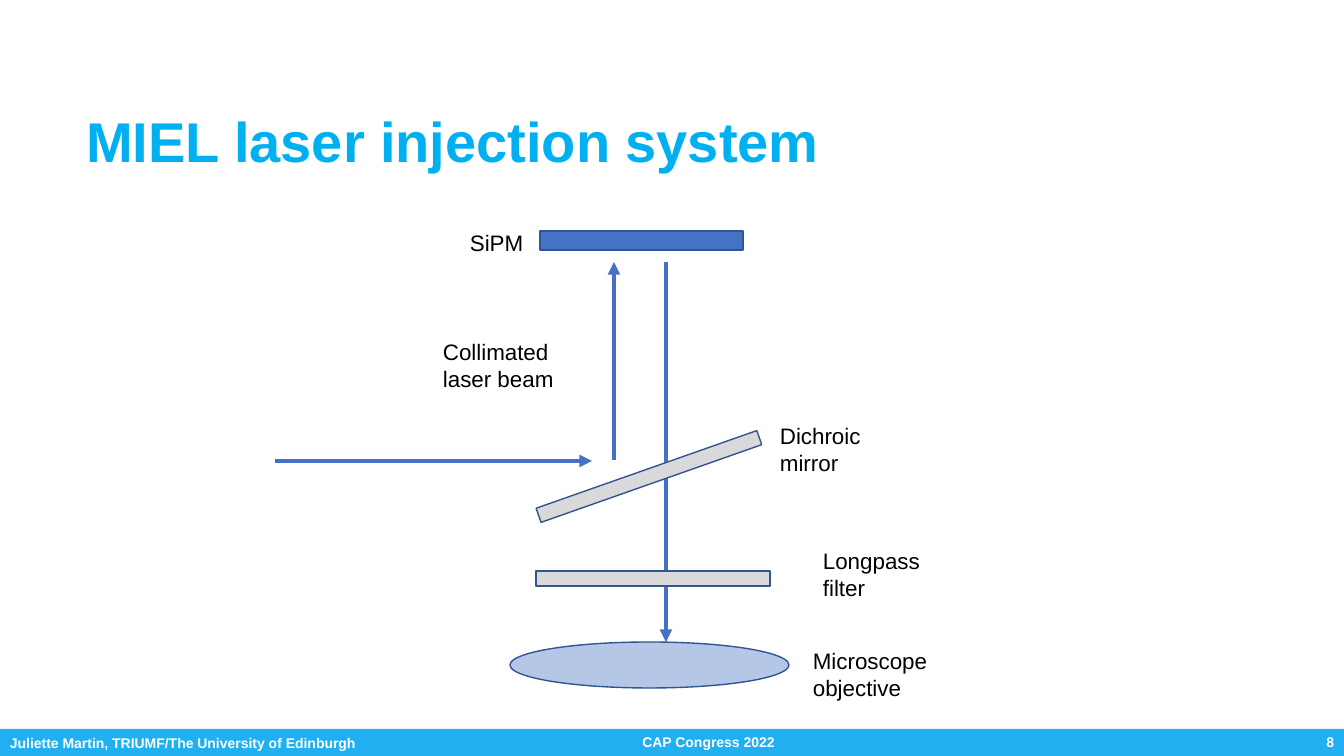
from dataclasses import dataclass

from lxml.etree import SubElement
from pptx import Presentation
from pptx.dml.color import RGBColor
from pptx.enum.shapes import MSO_CONNECTOR, MSO_SHAPE
from pptx.enum.text import MSO_ANCHOR, MSO_AUTO_SIZE, PP_ALIGN
from pptx.oxml.ns import qn
from pptx.slide import Slide
from pptx.text.text import TextFrame
from pptx.util import Emu, Pt

EMU_PER_PX = 914400 / 100.8
SLIDE_WIDTH, SLIDE_HEIGHT = 1344, 756


@dataclass(frozen=True)
class Theme:
    font: str = "Arial"
    title: str = "00B0F0"
    text: str = "000000"
    footer: str = "20B0F1"
    footer_text: str = "FFFFFF"
    beam: str = "4472C4"
    outline: str = "325491"
    glass: str = "D9D9D9"
    lens: str = "B4C7E7"
    title_size: int = 40
    label_size: int = 16
    footer_size: int = 10
    beam_width: int = 3
    outline_width: int = 1


THEME = Theme()


@dataclass(frozen=True)
class Box:
    left: int
    top: int
    width: int
    height: int

    def emu(self) -> tuple[Emu, Emu, Emu, Emu]:
        return px(self.left), px(self.top), px(self.width), px(self.height)


@dataclass(frozen=True)
class Part:
    box: Box
    fill: str
    preset: MSO_SHAPE = MSO_SHAPE.RECTANGLE
    outline: str | None = THEME.outline
    rotation: float = 0


@dataclass(frozen=True)
class Beam:
    start: tuple[int, int]
    end: tuple[int, int]


@dataclass(frozen=True)
class Label:
    text: str
    box: Box
    size: int = THEME.label_size
    color: str = THEME.text
    bold: bool = False
    align: PP_ALIGN = PP_ALIGN.LEFT


def px(length: int) -> Emu:
    return Emu(round(length * EMU_PER_PX))


def footer_label(text: str, box: Box, align: PP_ALIGN) -> Label:
    return Label(text, box, THEME.footer_size, THEME.footer_text, True, align)


FOOTER_TOP, FOOTER_HEIGHT = 729, 27
BEAMS = [
    Beam((614, 460), (614, 262)),  # reflected up to the SiPM
    Beam((666, 262), (666, 642)),  # from the SiPM to the objective
    Beam((275, 461), (592, 461)),  # incoming laser
]
PARTS = [
    Part(Box(540, 231, 203, 19), THEME.beam),  # SiPM
    Part(Box(532, 469, 234, 15), THEME.glass, rotation=340.6),  # dichroic mirror
    Part(Box(536, 571, 234, 15), THEME.glass),  # longpass filter
    Part(Box(510, 642, 279, 46), THEME.lens, MSO_SHAPE.OVAL),  # objective
    Part(Box(0, FOOTER_TOP, SLIDE_WIDTH, FOOTER_HEIGHT), THEME.footer, outline=None),
]
LABELS = [
    Label("SiPM", Box(460, 224, 153, 33)),
    Label("Collimated laser beam", Box(433, 333, 153, 64)),
    Label("Dichroic mirror", Box(770, 417, 153, 64)),
    Label("Longpass filter", Box(813, 542, 153, 64)),
    Label("Microscope objective", Box(803, 642, 175, 64)),
    footer_label("Juliette Martin, TRIUMF/The University of Edinburgh",
                 Box(0, FOOTER_TOP + 1, 379, FOOTER_HEIGHT), PP_ALIGN.LEFT),
    footer_label("CAP Congress 2022",
                 Box(519, FOOTER_TOP, 379, FOOTER_HEIGHT), PP_ALIGN.CENTER),
    footer_label("8", Box(1221, FOOTER_TOP, 123, FOOTER_HEIGHT), PP_ALIGN.RIGHT),
]


def write_text(frame: TextFrame, label: Label) -> None:
    frame.word_wrap = True
    frame.auto_size = MSO_AUTO_SIZE.NONE
    paragraph = frame.paragraphs[0]
    paragraph.alignment = label.align
    run = paragraph.add_run()
    run.text = label.text
    run.font.name = THEME.font
    run.font.size = Pt(label.size)
    run.font.bold = label.bold
    run.font.color.rgb = RGBColor.from_string(label.color)


def add_title(slide: Slide, label: Label) -> None:
    title = slide.shapes.title
    title.left, title.top, title.width, title.height = label.box.emu()
    write_text(title.text_frame, label)
    title.text_frame.vertical_anchor = MSO_ANCHOR.MIDDLE
    title.text_frame.paragraphs[0].line_spacing = 0.9


def add_label(slide: Slide, label: Label) -> None:
    text_box = slide.shapes.add_textbox(*label.box.emu())
    write_text(text_box.text_frame, label)


def add_part(slide: Slide, part: Part) -> None:
    shape = slide.shapes.add_shape(part.preset, *part.box.emu())
    shape.shadow.inherit = False
    shape.rotation = part.rotation
    shape.fill.solid()
    shape.fill.fore_color.rgb = RGBColor.from_string(part.fill)
    if part.outline:
        shape.line.color.rgb = RGBColor.from_string(part.outline)
        shape.line.width = Pt(THEME.outline_width)
    else:
        shape.line.fill.background()


def add_beam(slide: Slide, beam: Beam) -> None:
    ends = [px(length) for length in (*beam.start, *beam.end)]
    connector = slide.shapes.add_connector(MSO_CONNECTOR.STRAIGHT, *ends)
    connector.line.color.rgb = RGBColor.from_string(THEME.beam)
    connector.line.width = Pt(THEME.beam_width)
    properties = connector._element.spPr
    SubElement(properties.find(qn("a:ln")), qn("a:tailEnd"), type="triangle")
    SubElement(properties, qn("a:effectLst"))


def main() -> None:
    presentation = Presentation()
    presentation.slide_width = px(SLIDE_WIDTH)
    presentation.slide_height = px(SLIDE_HEIGHT)
    title_only = presentation.slide_layouts[5]
    slide = presentation.slides.add_slide(title_only)

    add_title(slide, Label("MIEL laser injection system", Box(76, 108, 987, 72),
                           THEME.title_size, THEME.title, True))
    # Beams lie behind the optical parts
    for beam in BEAMS:
        add_beam(slide, beam)
    for part in PARTS:
        add_part(slide, part)
    for label in LABELS:
        add_label(slide, label)

    presentation.save("out.pptx")


if __name__ == "__main__":
    main()
